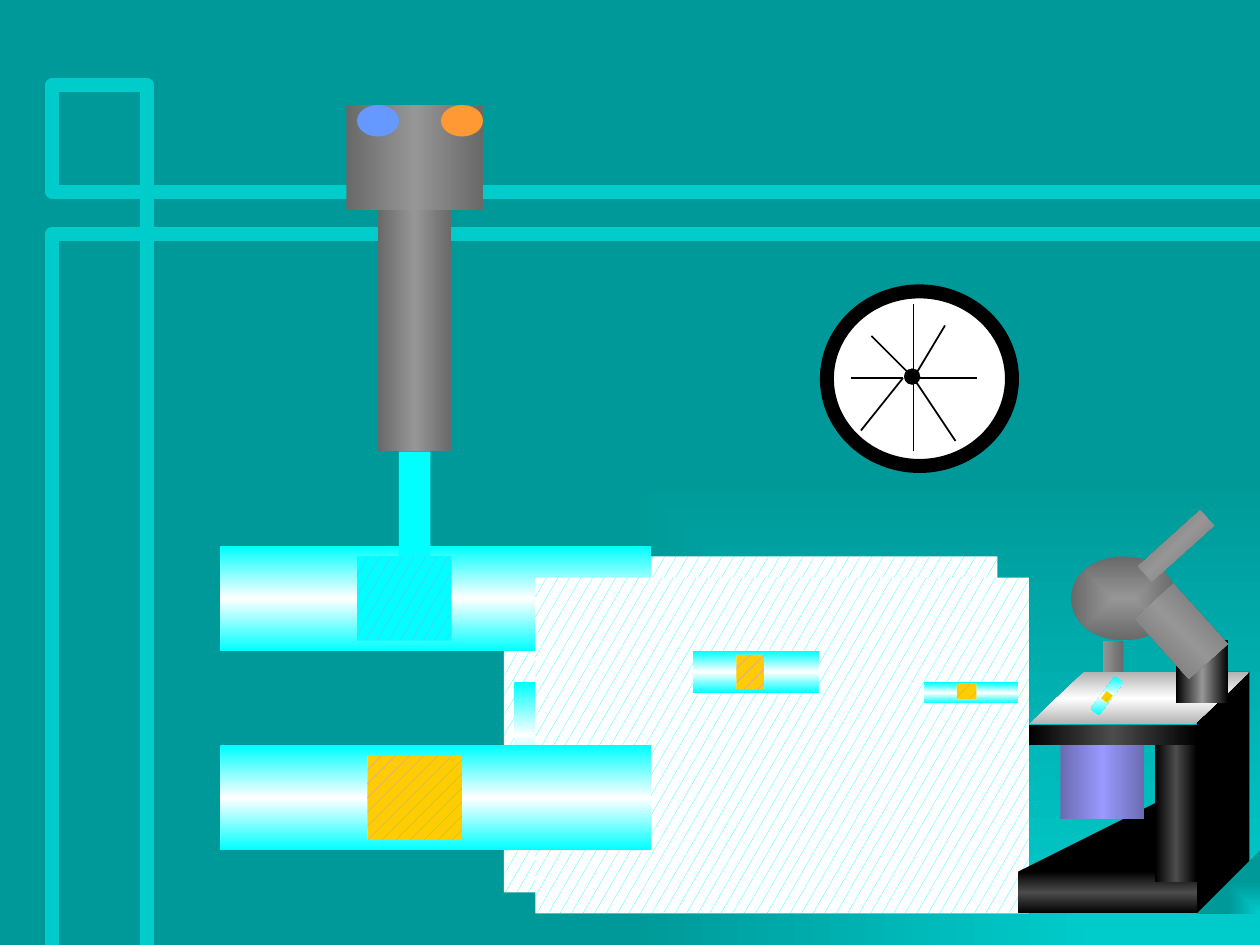
from dataclasses import dataclass
from lxml import etree
from pptx import Presentation
from pptx import util as u
from pptx.dml.color import RGBColor
from pptx.enum import dml, shapes
from pptx.oxml.ns import qn

PX = u.Inches(1) // 96
KIND = shapes.MSO_SHAPE
PAT = dml.MSO_PATTERN


@dataclass(frozen=True)
class Grad:
    """Colour stops with an angle, or with a path and its focus (l, t, r, b)."""
    stops: tuple
    ang: int = 0
    route: str = ""
    focus: tuple = (50, 50, 50, 50)


@dataclass(frozen=True)
class Hatch:
    kind: object
    fore: str
    back: str


def sheen(edge, mid, ang=0):
    return Grad((edge, mid, edge), ang)


@dataclass(frozen=True)
class Theme:
    black: str = "000000"
    white: str = "FFFFFF"
    frame: str = "00CCCC"
    cyan: str = "00FFFF"
    blue: str = "6699FF"
    orange: str = "FF9933"
    thick: int = 8
    thin: int = 1
    back: Grad = Grad(("00CCCC", "009999"), 0, "rect", (100, 100, 0, 0))
    glass: Grad = sheen("00FFFF", "FFFFFF", 90)
    lamp: Grad = sheen("6B6BB2", "9999FF")
    post: Grad = sheen("000000", "969696")
    head: Grad = Grad(("969696", "696969"), 0, "shape")
    lens: Grad = Grad(("969696", "696969"))
    stage: Grad = Grad(("FFFFFF", "B2B2B2"), 0, "shape")
    field: Hatch = Hatch(PAT.SMALL_CONFETTI, "00FFFF", "FFFFFF")
    cold: Hatch = Hatch(PAT.PERCENT_70, "9999FF", "00FFFF")
    wet: Hatch = Hatch(PAT.SMALL_CONFETTI, "9999FF", "00FFFF")
    pale: Hatch = Hatch(PAT.PERCENT_10, "9999FF", "FFFFFF")
    faint: Hatch = Hatch(PAT.PERCENT_20, "00FFFF", "FFFFFF")
    gold: Hatch = Hatch(PAT.PERCENT_10, "9999FF", "FFCC00")

    def steel(self, ang=0):
        return sheen("696969", "969696", ang)

    def iron(self, ang=0):
        return sheen("000000", "4C4C4C", ang)


T = Theme()


def paint(host, look):
    """Fill a shape or background with a colour, a hatch or a gradient."""
    fill = host.fill
    if isinstance(look, Hatch):
        fill.patterned()
        fill.pattern = look.kind
        fill.fore_color.rgb = RGBColor.from_string(look.fore)
        fill.back_color.rgb = RGBColor.from_string(look.back)
    elif isinstance(look, Grad):
        fill.gradient()
        blend(next(host._element.iter(qn("a:gradFill"))), look)
    else:
        fill.solid()
        fill.fore_color.rgb = RGBColor.from_string(look)


def blend(node, look):
    """Write the stops and direction of a gradient."""
    node.clear()
    node.set("rotWithShape", "0")
    stops = etree.SubElement(node, qn("a:gsLst"))
    for i, tint in enumerate(look.stops):
        pos = 100000 * i // (len(look.stops) - 1)
        stop = etree.SubElement(stops, qn("a:gs"), pos=str(pos))
        etree.SubElement(stop, qn("a:srgbClr"), val=tint)
    if look.route:
        route = etree.SubElement(node, qn("a:path"), path=look.route)
        sides = {k: str(v * 1000) for k, v in zip("ltrb", look.focus)}
        etree.SubElement(route, qn("a:fillToRect"), **sides)
    else:
        etree.SubElement(node, qn("a:lin"), ang=str(look.ang * 60000), scaled="1")


def ink(item, tint, width):
    item.line.color.rgb = RGBColor.from_string(tint)
    item.line.width = u.Pt(width)


def block(tree, box, look, kind=KIND.RECTANGLE, turn=0):
    item = tree.add_shape(kind, *(n * PX for n in box))
    item.rotation = turn
    item.shadow.inherit = False
    item.line.fill.background()
    paint(item, look)
    return item


def spoke(tree, start, end):
    line = tree.add_connector(shapes.MSO_CONNECTOR.STRAIGHT,
                              *(n * PX for n in start + end))
    ink(line, T.black, T.thin)
    etree.SubElement(line._element.spPr, qn("a:effectLst"))


def trace(tree, points):
    """Draw one open band of the frame."""
    pen = tree.build_freeform(*points[0], scale=PX)
    pen.add_line_segments(points[1:], close=False)
    band = pen.convert_to_shape()
    band.shadow.inherit = False
    band.fill.background()
    ink(band, T.frame, T.thick)


def group(tree):
    return tree.add_group_shape().shapes


def slab(tree, box, core, looks, turn=0):
    """Draw a glass slide with its layered sample."""
    block(tree, box, T.glass, turn=turn)
    for look in looks:
        block(tree, core, look, turn=turn)


def torch(tree):
    part = group(tree)
    block(part, (288, 160, 56, 184), T.steel())
    block(part, (264, 80, 104, 80), T.steel())
    for x, tint in ((336, T.orange), (272, T.blue)):
        block(part, (x, 80, 32, 24), tint, KIND.OVAL)
    block(tree, (304, 344, 24, 80), T.cyan)


def clock(tree):
    ink(block(tree, (630, 222, 141, 133), T.white, KIND.OVAL), T.black, T.thick)
    ink(block(tree, (688, 280, 14, 14), T.black, KIND.OVAL), T.white, T.thin)
    for end in ((696, 232), (720, 248), (744, 288), (728, 336),
                (696, 344), (664, 256), (696, 240)):
        spoke(tree, (696, 288), end)
    for end in ((656, 328), (648, 288)):
        spoke(tree, (688, 288), end)


def scope(tree):
    part = group(tree)
    block(part, (816, 424, 80, 64), T.head, KIND.OVAL)
    block(part, (840, 488, 16, 32), T.lens)
    block(part, (888, 384, 16, 64), T.steel(45), turn=48)
    block(part, (804, 580, 56, 112), T.black, KIND.RIGHT_TRIANGLE, 270)
    block(part, (912, 512, 40, 184), T.black)
    block(part, (776, 664, 136, 32), T.iron(90))
    block(part, (880, 568, 32, 104), T.iron())
    block(part, (784, 552, 128, 16), T.iron())
    block(part, (808, 568, 64, 56), T.lamp)
    stage = block(part, (784, 512, 168, 40), T.stage, KIND.PARALLELOGRAM)
    stage.adjustments[0] = 1.05
    block(part, (912, 648, 48, 48), T.back, KIND.RIGHT_TRIANGLE, 270)
    block(part, (896, 488, 40, 48), T.post)
    block(part, (880, 450, 40, 62), T.steel(315), turn=318)
    slab(part, (828, 526, 31, 8), (840, 528, 7, 6), (T.faint, T.gold), 307)


def main():
    deck = Presentation()
    deck.slide_width, deck.slide_height = 960 * PX, 720 * PX
    slide = deck.slides.add_slide(deck.slide_layouts[6])
    tree = slide.shapes
    slide.background.fill.gradient()
    blend(next(slide._element.iter(qn("a:gradFill"))), T.back)
    trace(tree, [(960, 178), (40, 178), (40, 720)])
    trace(tree, [(112, 720), (112, 65), (40, 65), (40, 146), (960, 146)])

    block(tree, (384, 424, 376, 256), T.field)
    slab(group(tree), (168, 416, 328, 80), (272, 424, 72, 64), (T.cold,))
    torch(tree)
    clock(tree)
    block(tree, (272, 424, 72, 64), T.wet)
    slab(group(tree), (392, 520, 328, 80), (512, 528, 72, 64), (T.cold, T.wet))
    block(tree, (408, 440, 376, 256), T.field)
    for box, core, base in (
            ((168, 568, 328, 80), (280, 576, 72, 64), T.pale),
            ((528, 496, 96, 32), (561, 499, 21, 26), T.faint),
            ((704, 520, 72, 16), (729, 521, 15, 12), T.faint)):
        slab(group(tree), box, core, (base, T.gold))
    scope(tree)
    deck.save("out.pptx")


if __name__ == "__main__":
    main()
